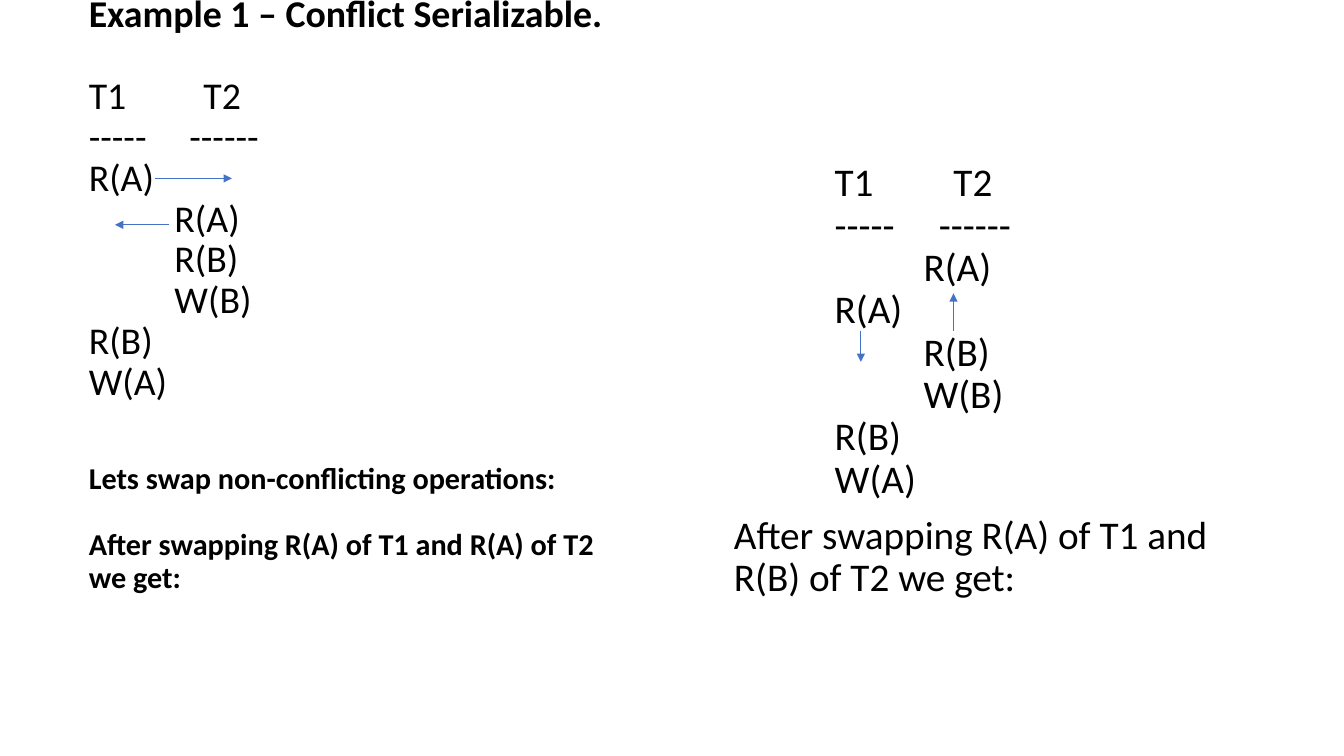
from collections import namedtuple
from lxml.etree import SubElement
from pptx import Presentation
from pptx.dml.color import RGBColor
from pptx.enum.text import MSO_ANCHOR, MSO_AUTO_SIZE, PP_ALIGN
from pptx.enum.shapes import MSO_CONNECTOR
from pptx.oxml.ns import qn
from pptx.util import Pt

Theme = namedtuple("Theme", "font ink arrow heading note body")
theme = Theme("Calibri", RGBColor(0, 0, 0), RGBColor(0x44, 0x72, 0xC4), Pt(27), Pt(21.6), Pt(28))


def place(holder, left, top, width, height):
    holder.left, holder.top, holder.width, holder.height = Pt(left), Pt(top), Pt(width), Pt(height)
    frame = holder.text_frame
    frame.word_wrap = True
    frame.auto_size = MSO_AUTO_SIZE.NONE
    frame.margin_left = frame.margin_right = Pt(7.2)
    frame.margin_top = frame.margin_bottom = Pt(3.6)
    return frame


def add_line(frame, parts, size, bold=False, before=0, indent=0, gap=0):
    line = frame.paragraphs[0] if not frame.text else frame.add_paragraph()
    line.alignment = PP_ALIGN.LEFT
    line.line_spacing = 0.9
    line.space_before = Pt(before)
    line.space_after = Pt(0)
    properties = line._p.get_or_add_pPr()
    properties.set("marL", str(Pt(indent)))
    properties.set("indent", "0")
    SubElement(properties, qn("a:buNone"))
    for text in parts:
        run = line.add_run()
        run.text = text
        run.font.name = theme.font
        run.font.size = size
        run.font.bold = bold
        run.font.color.rgb = theme.ink
        if text == " ":
            run.font._element.set("spc", str(round(gap * 100)))


deck = Presentation()
deck.slide_width, deck.slide_height = Pt(960), Pt(540)
slide = deck.slides.add_slide(deck.slide_layouts[1])

example = place(slide.shapes.title, 56.2, 28.8, 398.2, 424.8)
example.vertical_anchor = MSO_ANCHOR.MIDDLE
example.margin_bottom = Pt(64.8)
swapped = place(slide.placeholders[1], 517, 28.8, 376.6, 457.9)
swapped.vertical_anchor = MSO_ANCHOR.TOP
swapped.margin_top = Pt(87.5)

header = [(["T1", " ", "T2"], 0, 48.9), (["-----", " ", "------"], 0, 24.4)]
t2_indent = 61.2
t1_read_a, t2_read_a = (["R(A)"], 0, 0), (["R(A)"], t2_indent, 0)
remaining = [(["R(B)"], t2_indent, 0), (["W(B)"], t2_indent, 0), (["R(B)"], 0, 0), (["W(A)"], 0, 0)]

add_line(example, ["Example 1 – Conflict Serializable."], theme.heading, True)
for row, (parts, indent, gap) in enumerate(header + [t1_read_a, t2_read_a] + remaining):
    add_line(example, parts, theme.heading, before=0 if row else 29.3, indent=indent, gap=gap)
add_line(example, ["Lets swap non-conflicting operations:"], theme.note, True, 42.8)
add_line(example, ["After swapping R(A) of T1 and R(A) of T2 we get:"], theme.note, True, 23.7)

t1_indent, widening = 72, theme.body / theme.heading
for parts, indent, gap in header + [t2_read_a, t1_read_a] + remaining:
    add_line(swapped, parts, theme.body, indent=t1_indent + indent * widening, gap=gap * widening)
add_line(swapped, ["After swapping R(A) of T1 and R(B) of T2 we get:"], theme.body, before=10)

swap_moves = [
    (110.9, 127.4, 165.6, 127.4),
    (121, 160.6, 82.1, 160.6),
    (681.1, 236.2, 681.1, 209.5),
    (614.9, 236.2, 614.9, 258.5),
]
for move in swap_moves:
    arrow = slide.shapes.add_connector(MSO_CONNECTOR.STRAIGHT, *map(Pt, move))
    arrow.line.color.rgb = theme.arrow
    arrow.line.width = Pt(0.5)
    SubElement(arrow.line._get_or_add_ln(), qn("a:tailEnd"), type="triangle")
    SubElement(arrow._element.spPr, qn("a:effectLst"))

deck.save("out.pptx")
